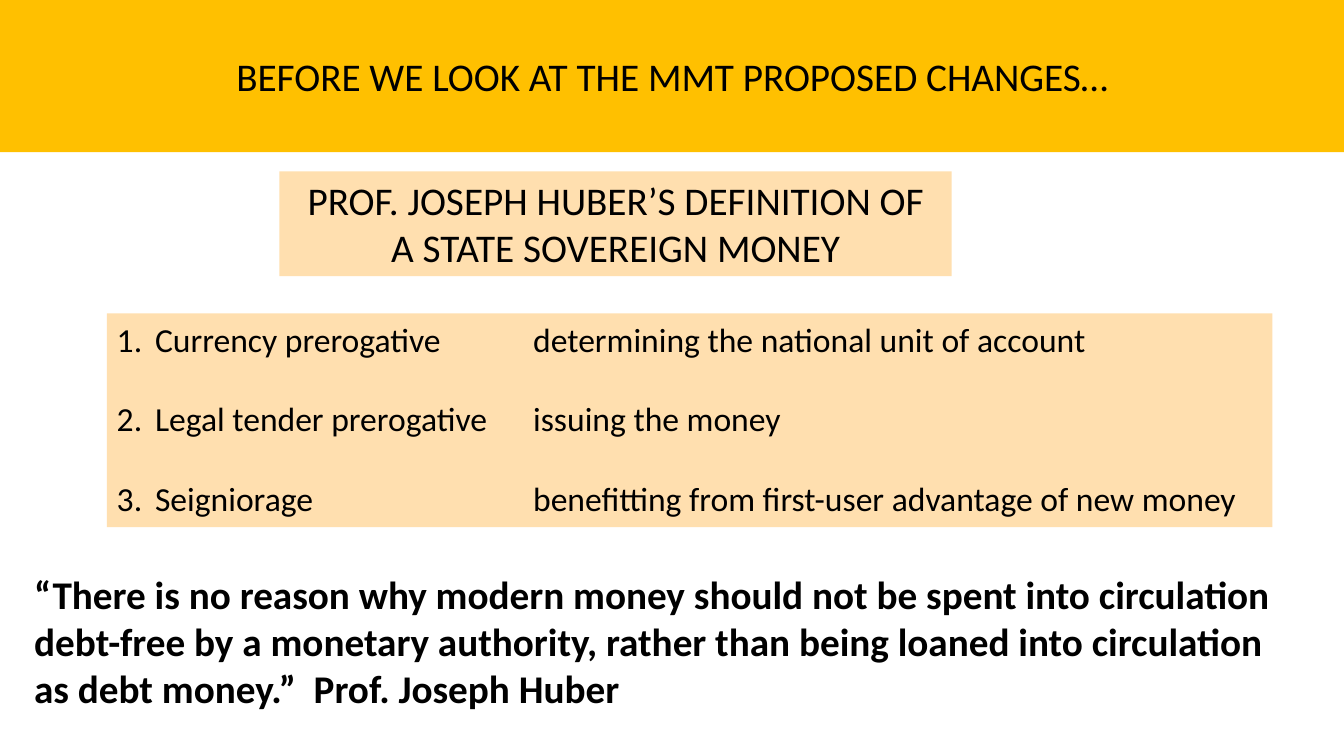
import pptx
import pptx.util
import pptx.dml.color
import pptx.enum.text
import pptx.oxml.ns
import lxml.etree

COLORS = {"gold": "FFC000", "peach": "FFDFAF", "text": "000000"}
ALIGN = pptx.enum.text.PP_ALIGN
ANCHOR = pptx.enum.text.MSO_ANCHOR

deck = pptx.Presentation()
deck.slide_width = pptx.util.Inches(13.33)
deck.slide_height = pptx.util.Inches(7.5)
page = deck.slides.add_slide(deck.slide_layouts[5])


def place(box, left, top, width, height, fill=None):
    box.left, box.top, box.width, box.height = [
        pptx.util.Inches(length) for length in (left, top, width, height)
    ]
    if fill:
        box.fill.solid()
        box.fill.fore_color.rgb = pptx.dml.color.RGBColor.from_string(COLORS[fill])


def write(box, lines, size, align, anchor, bold=False):
    frame = box.text_frame
    frame.word_wrap = True
    frame.vertical_anchor = anchor
    for number, line in enumerate(lines):
        para = frame.add_paragraph() if number else frame.paragraphs[0]
        para.alignment = align
        span = para.add_run()
        span.text = line
        span.font.name = "Calibri"
        span.font.size = pptx.util.Pt(size)
        span.font.bold = bold
        span.font.color.rgb = pptx.dml.color.RGBColor.from_string(COLORS["text"])
    return frame.paragraphs


title = page.shapes.title
place(title, 0, 0, 13.33, 1.51, "gold")
write(title, ["BEFORE WE LOOK AT THE MMT PROPOSED CHANGES…"], 28, ALIGN.CENTER, ANCHOR.MIDDLE)

prerogatives = page.shapes.add_textbox(0, 0, 0, 0)
place(prerogatives, 1.06, 3.11, 11.56, 2.12, "peach")
items = [
    ("Currency prerogative", "determining the national unit of account"),
    ("Legal tender prerogative", "issuing the money"),
    ("Seigniorage", "benefitting from first-user advantage of new money"),
]
lines = ["\t".join(item) for item in items]
for number, para in enumerate(write(prerogatives, lines, 24, ALIGN.LEFT, ANCHOR.TOP)):
    para.space_before = pptx.util.Pt(28 if number else 0)
    settings = para._p.get_or_add_pPr()
    indent = pptx.util.Inches(0.38)
    settings.set("marL", str(indent))
    settings.set("indent", str(-indent))
    bullet = lxml.etree.SubElement(settings, pptx.oxml.ns.qn("a:buAutoNum"))
    bullet.set("type", "arabicPeriod")
    tabs = lxml.etree.SubElement(settings, pptx.oxml.ns.qn("a:tabLst"))
    tab = lxml.etree.SubElement(tabs, pptx.oxml.ns.qn("a:tab"))
    tab.set("pos", str(pptx.util.Inches(4.13)))
    tab.set("algn", "l")

definition = page.shapes.add_textbox(0, 0, 0, 0)
place(definition, 2.77, 1.7, 6.67, 1.04, "peach")
heading = ["PROF. JOSEPH HUBER’S DEFINITION OF", "A STATE SOVEREIGN MONEY"]
write(definition, heading, 28, ALIGN.CENTER, ANCHOR.MIDDLE)

quote = page.shapes.add_textbox(0, 0, 0, 0)
place(quote, 0.24, 5.61, 12.59, 1.51)
sentences = [
    "“There is no reason why modern money should not be spent into circulation",
    "debt-free by a monetary authority, rather than being loaned into circulation",
    "as debt money.”  Prof. Joseph Huber",
]
write(quote, sentences, 28, ALIGN.LEFT, ANCHOR.TOP, bold=True)

deck.save("out.pptx")
